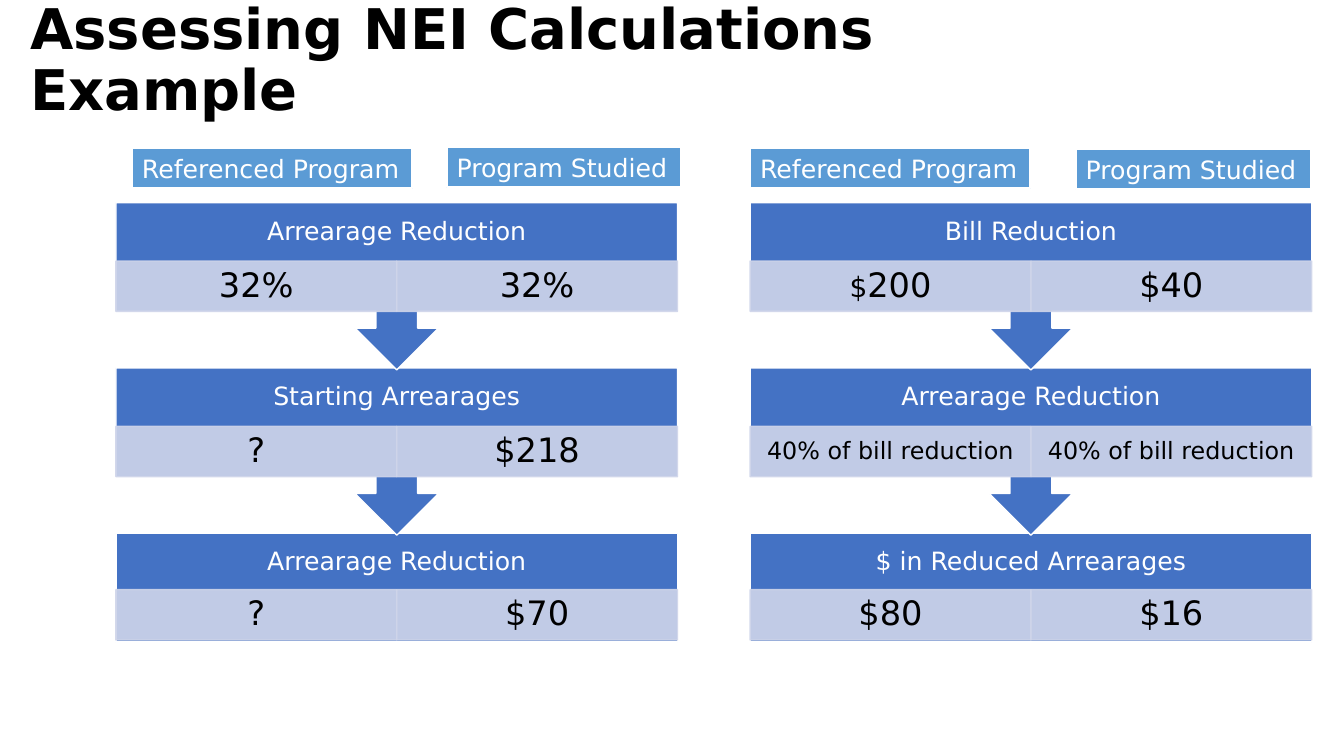
from dataclasses import dataclass

from lxml import etree
from pptx import Presentation
from pptx.dml.color import RGBColor
from pptx.enum.shapes import MSO_SHAPE
from pptx.enum.text import MSO_ANCHOR, MSO_AUTO_SIZE, PP_ALIGN
from pptx.oxml.ns import qn
from pptx.shapes.autoshape import Shape
from pptx.shapes.shapetree import GroupShapes, SlideShapes
from pptx.text.text import Font, TextFrame
from pptx.util import Inches, Pt

RECTANGLE = MSO_SHAPE.RECTANGLE
ARROW_CALLOUT = MSO_SHAPE.UP_ARROW_CALLOUT
MIDDLE = MSO_ANCHOR.MIDDLE
NO_AUTOFIT = MSO_AUTO_SIZE.NONE
GROW_TO_TEXT = MSO_AUTO_SIZE.SHAPE_TO_FIT_TEXT
LEFT = PP_ALIGN.LEFT
CENTER = PP_ALIGN.CENTER

FONT_NAME = "DejaVu Sans"
BLACK, WHITE = "000000", "FFFFFF"
STEP_BLUE, CELL_BLUE, LABEL_BLUE = "4472C4", "CFD5EA", "5B9BD5"

STEP_TOP, STEP_PITCH, STEP_WIDTH = 2.01, 1.64, 5.57
CALLOUT_HEIGHT, LAST_HEIGHT, HEADING_HEIGHT = 1.66, 1.08, 0.58
CELL_HEIGHT = 0.5
CALLOUT_BODY_SHARE = 0.65


@dataclass(frozen=True)
class Piece:
    text: str
    size: int = 24


@dataclass(frozen=True)
class Step:
    heading: str
    referenced: tuple[Piece, ...]
    studied: tuple[Piece, ...]
    cell_offset: float = 0.58


@dataclass(frozen=True)
class Flow:
    left: float
    steps: tuple[Step, ...]


@dataclass(frozen=True)
class Label:
    text: str
    left: float
    top: float
    width: float


BILL_SHARE = (Piece("40% of bill reduction", 17),)
FLOWS = (
    Flow(7.44, (
        Step("Bill Reduction", (Piece("$", 20), Piece("200")), (Piece("$40"),)),
        Step("Arrearage Reduction", BILL_SHARE, BILL_SHARE),
        Step("$ in Reduced Arrearages", (Piece("$80"),), (Piece("$16"),), 0.56),
    )),
    Flow(1.15, (
        Step("Arrearage Reduction", (Piece("32%"),), (Piece("32%"),)),
        Step("Starting Arrearages", (Piece("?"),), (Piece("$218"),)),
        Step("Arrearage Reduction", (Piece("?"),), (Piece("$70"),), 0.56),
    )),
)
LABELS = (
    Label("Referenced Program", 1.31, 1.47, 2.78),
    Label("Referenced Program", 7.44, 1.47, 2.78),
    Label("Program Studied", 4.43, 1.46, 2.33),
    Label("Program Studied", 10.67, 1.48, 2.33),
)


def rgb(color: str) -> RGBColor:
    return RGBColor.from_string(color)


def format_font(font: Font, size: float, color: str, bold: bool = False) -> None:
    font.name = FONT_NAME
    font.size = Pt(size)
    font.bold = bold
    font.color.rgb = rgb(color)


def add_block(shapes: SlideShapes | GroupShapes, kind: MSO_SHAPE, left: float, top: float,
              width: float, height: float, fill: str, line: str, line_width: float) -> Shape:
    shape = shapes.add_shape(kind, Inches(left), Inches(top), Inches(width), Inches(height))
    shape.shadow.inherit = False
    shape.fill.solid()
    shape.fill.fore_color.rgb = rgb(fill)
    shape.line.color.rgb = rgb(line)
    shape.line.width = Pt(line_width)
    return shape


def set_opacity(shape: Shape, percent: int) -> None:
    for color in shape.element.spPr.iter(qn("a:srgbClr")):
        etree.SubElement(color, qn("a:alpha"), val=str(percent * 1000))


def write_centered(frame: TextFrame, pieces: tuple[Piece, ...], color: str,
                   side_inset: float, end_inset: float) -> None:
    frame.word_wrap = True
    frame.vertical_anchor = MIDDLE
    frame.margin_left = frame.margin_right = Inches(side_inset)
    frame.margin_top = frame.margin_bottom = Inches(end_inset)
    paragraph = frame.paragraphs[0]
    paragraph.alignment = CENTER
    paragraph.line_spacing = 0.9
    for piece in pieces:
        run = paragraph.add_run()
        run.text = piece.text
        format_font(run.font, piece.size, color)


def add_step(shapes: GroupShapes, step: Step, left: float, top: float, is_last: bool) -> None:
    kind, height = (RECTANGLE, LAST_HEIGHT) if is_last else (ARROW_CALLOUT, CALLOUT_HEIGHT)
    block = add_block(shapes, kind, left, top, STEP_WIDTH, height, STEP_BLUE, WHITE, 1)
    if not is_last:
        block.rotation = 180
        block.adjustments[3] = CALLOUT_BODY_SHARE
    heading = shapes.add_textbox(Inches(left), Inches(top), Inches(STEP_WIDTH),
                                 Inches(HEADING_HEIGHT))
    write_centered(heading.text_frame, (Piece(step.heading, 18),), WHITE, 0.14, 0.14)
    cell_width = STEP_WIDTH / 2
    for column, pieces in enumerate((step.referenced, step.studied)):
        cell = add_block(shapes, RECTANGLE, left + column * cell_width, top + step.cell_offset,
                         cell_width, CELL_HEIGHT, CELL_BLUE, CELL_BLUE, 1)
        set_opacity(cell, 90)
        write_centered(cell.text_frame, pieces, BLACK, 0.13, 0.03)


def add_flow(shapes: SlideShapes, flow: Flow) -> None:
    group = shapes.add_group_shape()
    last = len(flow.steps) - 1
    for index in range(last, -1, -1):
        add_step(group.shapes, flow.steps[index], flow.left,
                 STEP_TOP + index * STEP_PITCH, index == last)


def add_label(shapes: SlideShapes, label: Label) -> None:
    shape = add_block(shapes, RECTANGLE, label.left, label.top, label.width, 0.4,
                      LABEL_BLUE, WHITE, 1.5)
    frame = shape.text_frame
    frame.text = label.text
    frame.word_wrap = False
    frame.auto_size = GROW_TO_TEXT
    frame.vertical_anchor = MSO_ANCHOR.TOP
    paragraph = frame.paragraphs[0]
    paragraph.alignment = LEFT
    format_font(paragraph.runs[0].font, 18, WHITE)


def format_title(title: Shape) -> None:
    title.left, title.top = Inches(0.2), Inches(-0.11)
    title.width, title.height = Inches(11.5), Inches(1.45)
    frame = title.text_frame
    frame.text = "Assessing NEI Calculations\vExample"
    frame.auto_size = NO_AUTOFIT
    frame.vertical_anchor = MIDDLE
    paragraph = frame.paragraphs[0]
    paragraph.alignment = LEFT
    paragraph.line_spacing = 0.9
    for run in paragraph.runs:
        format_font(run.font, 40, BLACK, bold=True)


def main() -> None:
    presentation = Presentation()
    presentation.slide_width = Inches(13.33)
    presentation.slide_height = Inches(7.5)
    slide = presentation.slides.add_slide(presentation.slide_layouts[5])
    format_title(slide.shapes.title)
    for flow in FLOWS:
        add_flow(slide.shapes, flow)
    for label in LABELS:
        add_label(slide.shapes, label)
    presentation.save("out.pptx")


if __name__ == "__main__":
    main()
